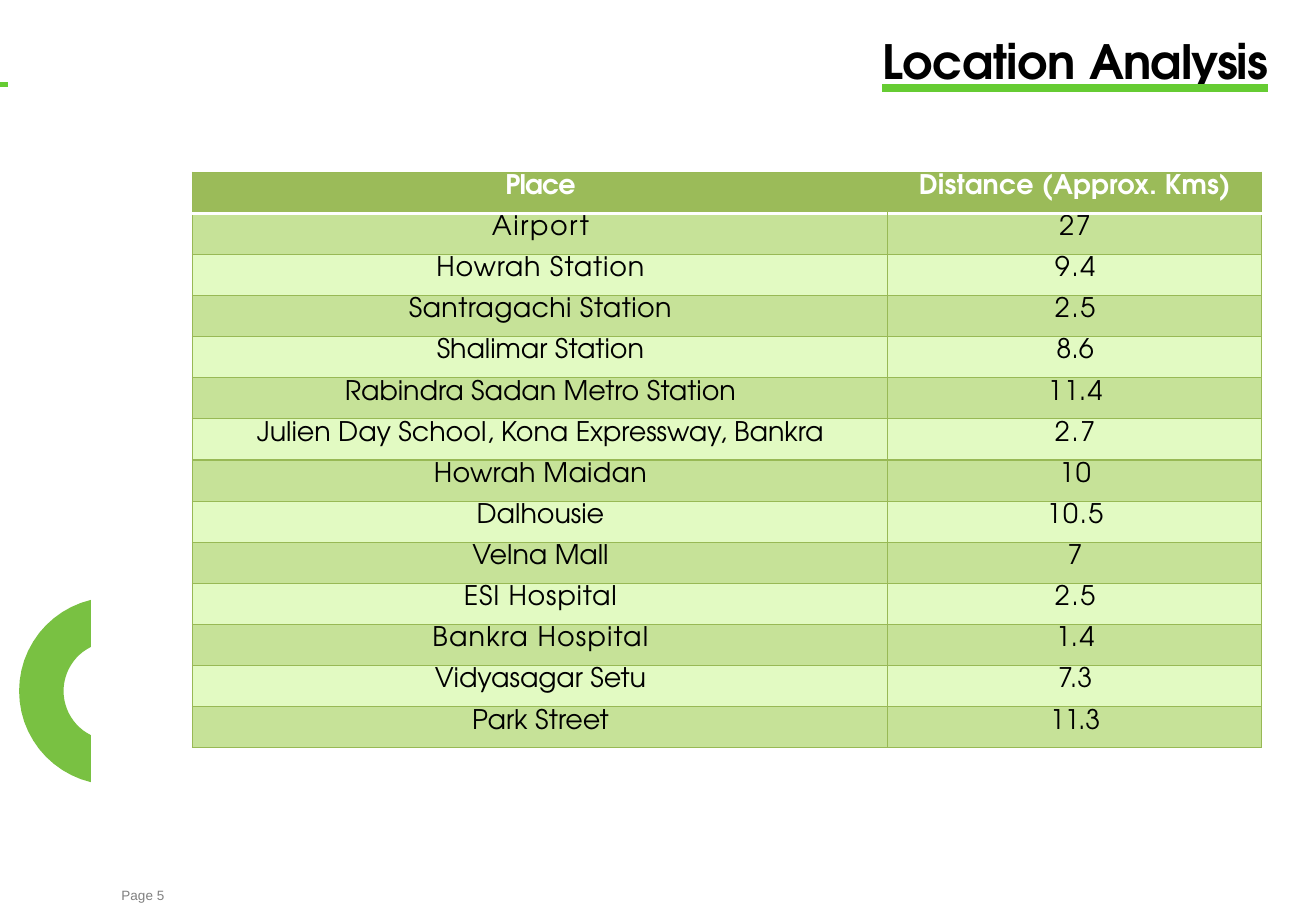
from math import acos, cos, pi, sin

from lxml.etree import SubElement
from pptx import Presentation
from pptx.dml.color import RGBColor
from pptx.enum.text import MSO_ANCHOR, MSO_UNDERLINE, PP_ALIGN
from pptx.oxml import parse_xml
from pptx.oxml.ns import nsdecls, qn
from pptx.util import Cm, Pt

COLORS = {
    "ring": "79C142", "underline": "66CC33", "header": "9BBB59",
    "dark": "C6E298", "light": "E2FAC2", "border": "98B955",
    "white": "FFFFFF", "black": "000000", "gray": "808080",
}
TITLE = {"name": "TeX Gyre Adventor", "size": Pt(28), "bold": True,
         "underline": MSO_UNDERLINE.HEAVY_LINE}
HEADER = {"name": "TeX Gyre Adventor", "size": Pt(16), "bold": True}
BODY = {"name": "TeX Gyre Adventor", "size": Pt(16), "bold": False}
FOOTER = {"name": "Arial", "size": Pt(8), "bold": False}


def add_run(p, text, style, color, spacing=0):
    r = p.add_run()
    r.text = text
    for name, value in style.items():
        setattr(r.font, name, value)
    r.font.color.rgb = RGBColor.from_string(COLORS[color])
    r.font._element.set("spc", str(round(spacing * 100)))
    return r


def add_text_box(slide, left, top, width, height, inset):
    tf = slide.shapes.add_textbox(Cm(left), Cm(top), Cm(width), Cm(height)).text_frame
    margins = {"margin_left": 0, "margin_right": 0, "margin_bottom": 0,
               "margin_top": Cm(inset), "word_wrap": True}
    for name, value in margins.items():
        setattr(tf, name, value)
    return tf.paragraphs[0]


prs = Presentation()
prs.slide_width, prs.slide_height = Cm(27.51), Cm(19.05)
s = prs.slides.add_slide(prs.slide_layouts[6])

center_x, center_y, cut_x = 2.36, 14.45, 1.9
steps = 24
points = []
for radius, direction in ((1.96, 1), (1.03, -1)):
    half = acos((center_x - cut_x) / radius)
    for i in range(steps + 1):
        angle = pi + direction * half * (1 - 2 * i / steps)
        points.append((Cm(center_x + radius * cos(angle)),
                       Cm(center_y + radius * sin(angle))))
builder = s.shapes.build_freeform(*points[0])
builder.add_line_segments(points[1:], close=True)
ring = builder.convert_to_shape()
ring.shadow.inherit = False
ring.fill.solid()
ring.fill.fore_color.rgb = RGBColor.from_string(COLORS["ring"])
ring.line.fill.background()

dash = s.shapes.add_connector(1, 0, Cm(1.76), Cm(0.17), Cm(1.76))
dash.line.color.rgb = RGBColor.from_string(COLORS["underline"])
dash.line.width = Pt(3)
SubElement(dash._element.spPr, qn("a:effectLst"))

p = add_text_box(s, 18.44, 0.64, 9.07, 1.24, 0.03)
for text, spacing in (("Location", -0.2), (" ", 0.1), ("Analysis", -0.5)):
    r = add_run(p, text, TITLE, "black", spacing)
    r.font._element.find(qn("a:latin")).addprevious(parse_xml(
        f'<a:uFill {nsdecls("a")}><a:solidFill>'
        f'<a:srgbClr val="{COLORS["underline"]}"/></a:solidFill></a:uFill>'))

p = add_text_box(s, 2.54, 18.54, 1.4, 0.38, 0)
add_run(p, "Page 5", FOOTER, "gray")

rows = [
    ("Place", -0.5, "Distance (Approx. Kms)", 0.1),
    ("Airport", 1, "27", 1),
    ("Howrah Station", 0.55, "9.4", 0.9),
    ("Santragachi Station", 0.25, "2.5", 0.9),
    ("Shalimar Station", 0, "8.6", 0),
    ("Rabindra Sadan Metro Station", 0, "11.4", 0.9),
    ("Julien Day School, Kona Expressway, Bankra", 0, "2.7", 0.9),
    ("Howrah Maidan", 0.2, "10", 0.9),
    ("Dalhousie", 0, "10.5", 0.9),
    ("Velna Mall", 0, "7", 0.9),
    ("ESI Hospital", 0.5, "2.5", 0.9),
    ("Bankra Hospital", 0.7, "1.4", 0.9),
    ("Vidyasagar Setu", 0, "7.3", 0),
    ("Park Street", 0, "11.3", 0),
]
row_height = 0.86
table = s.shapes.add_table(len(rows), 2, Cm(4.02), Cm(3.6), Cm(22.35),
                           Cm(row_height * len(rows))).table
for column, width in zip(table.columns, (14.53, 7.82)):
    column.width = Cm(width)

for i, (place, place_spacing, distance, distance_spacing) in enumerate(rows):
    table.rows[i].height = Cm(row_height)
    fill = "header" if i == 0 else "dark" if i % 2 else "light"
    for j, (text, spacing) in enumerate(((place, place_spacing),
                                         (distance, distance_spacing))):
        cell = table.cell(i, j)
        layout = {"margin_left": Cm(0.03), "margin_right": 0, "margin_top": Cm(0.05),
                  "margin_bottom": 0, "vertical_anchor": MSO_ANCHOR.TOP}
        for name, value in layout.items():
            setattr(cell, name, value)
        p = cell.text_frame.paragraphs[0]
        p.alignment = PP_ALIGN.CENTER
        add_run(p, text, BODY if i else HEADER, "black" if i else "white", spacing)

        borders = {side: ("border", 0.75) for side in ("lnL", "lnR", "lnT", "lnB")}
        if i == 0:
            borders["lnB"] = ("white", 2)
            borders["lnL" if j else "lnR"] = ("header", 0.75)
        if i == 1:
            borders["lnT"] = ("white", 2)
        tcPr = cell._tc.get_or_add_tcPr()
        for side, (color, width) in borders.items():
            ln = SubElement(tcPr, qn(f"a:{side}"), w=str(Pt(width)))
            solid = SubElement(ln, qn("a:solidFill"))
            SubElement(solid, qn("a:srgbClr"), val=COLORS[color])
        cell.fill.solid()
        cell.fill.fore_color.rgb = RGBColor.from_string(COLORS[fill])

prs.save("out.pptx")
